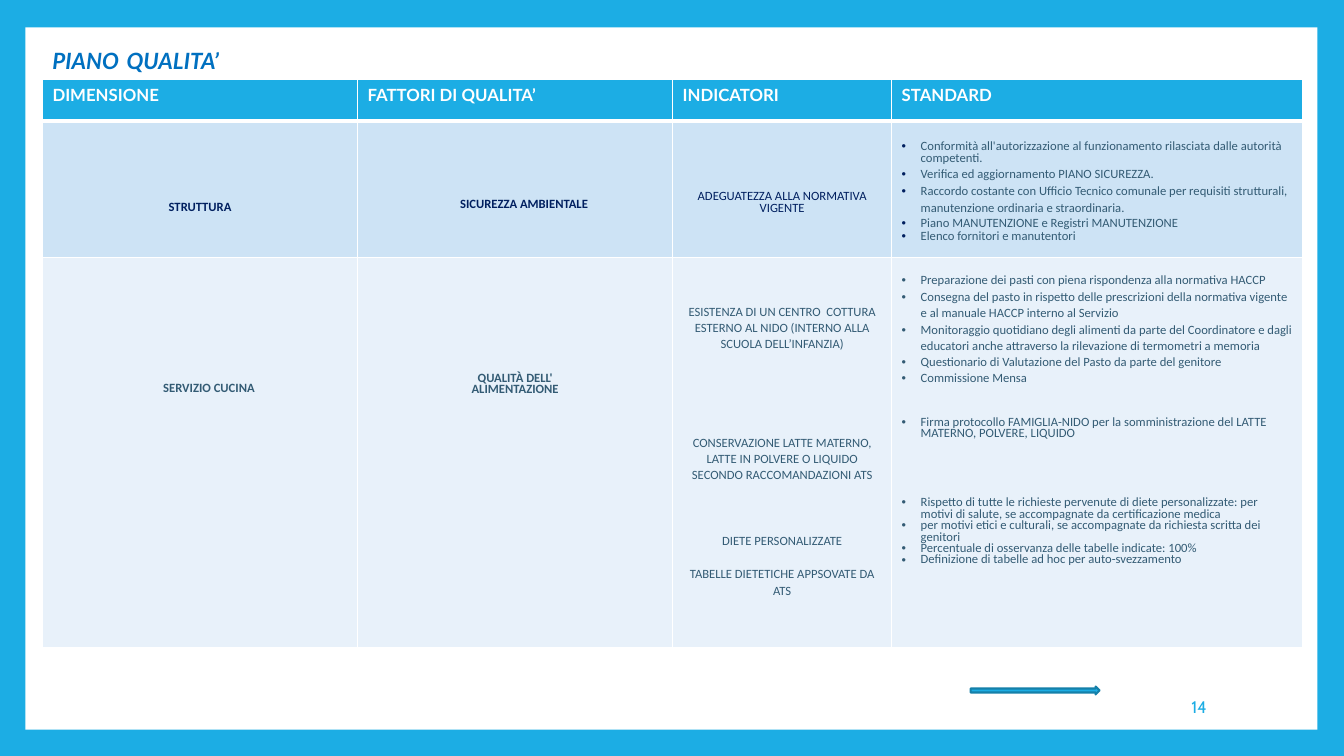
from lxml import etree
from pptx import Presentation
from pptx import util as u
from pptx.dml.color import RGBColor
from pptx.enum import shapes, text
from pptx.oxml.ns import qn

Cm, Pt = u.Cm, u.Pt
COLORS = {"sky": "1CADE4", "white": "FFFFFF", "blue": "0070C0", "navy": "001F5F",
          "slate": "335B74", "edge": "1580A9", "band1": "CDE3F5", "band2": "E8F1FA",
          "black": "000000"}
LEFT, CENTER, RIGHT = text.PP_ALIGN.LEFT, text.PP_ALIGN.CENTER, text.PP_ALIGN.RIGHT

HEADERS = ["DIMENSIONE", "FATTORI DI QUALITA’", "INDICATORI", "STANDARD"]
COLUMN_WIDTHS = [7.94, 7.94, 5.52, 10.36]
ROW_HEIGHTS = [1.04, 3.43, 9.85]
TIGHT = Pt(8.2)

# Each cell: top margin (cm), left indent (cm), paragraphs.
# Each paragraph: wording, line spacing, space before (pt).
STRUTTURA = [
    (1.98, 0, [("STRUTTURA", 1.0, 0)]),
    (1.87, 0.45, [("SICUREZZA AMBIENTALE", 1.07, 0)]),
    (1.81, 0, [("ADEGUATEZZA ALLA NORMATIVA VIGENTE", Pt(8.1), 0)]),
    (0.55, 0.48, [
        ("Conformità all'autorizzazione al funzionamento rilasciata dalle autorità "
         "competenti.", Pt(8.1), 0),
        ("Verifica ed aggiornamento PIANO SICUREZZA.", 1.0, 0.7),
        ("Raccordo costante con Ufficio Tecnico comunale per requisiti strutturali, "
         "manutenzione ordinaria e straordinaria.", 1.07, 0.7),
        ("Piano MANUTENZIONE e Registri MANUTENZIONE", 1.0, 0),
        ("Elenco fornitori e manutentori", TIGHT, 0.7),
    ]),
]
CUCINA = [
    (3.07, 0.45, [("SERVIZIO CUCINA", 1.07, 0)]),
    (2.82, 0, [("QUALITÀ DELL'", 1.07, 0), ("ALIMENTAZIONE", Pt(8.4), 0)]),
    (1.16, 0, [
        ("ESISTENZA DI UN CENTRO  COTTURA ESTERNO AL NIDO (INTERNO ALLA SCUOLA "
         "DELL’INFANZIA)", 1.07, 0),
        ("CONSERVAZIONE LATTE MATERNO, LATTE IN POLVERE O LIQUIDO SECONDO "
         "RACCOMANDAZIONI ATS", 1.07, 58.3),
        ("DIETE PERSONALIZZATE", 1.07, 35.4),
        ("TABELLE DIETETICHE APPSOVATE DA ATS", 1.07, 11.9),
    ]),
    (0.38, 0.48, [
        ("Preparazione dei pasti con piena rispondenza alla normativa HACCP", 1.0, 0),
        ("Consegna del pasto in rispetto delle prescrizioni della normativa vigente e "
         "al manuale HACCP interno al Servizio", 1.07, 0.7),
        ("Monitoraggio quotidiano degli alimenti da parte del Coordinatore e dagli "
         "educatori anche attraverso la rilevazione di termometri a memoria", 1.06, 0.1),
        ("Questionario di Valutazione del Pasto da parte del genitore", 1.0, 0.1),
        ("Commissione Mensa", 1.0, 0.7),
        ("Firma protocollo FAMIGLIA-NIDO per la somministrazione del LATTE MATERNO, "
         "POLVERE, LIQUIDO", TIGHT, 23.2),
        ("Rispetto di tutte le richieste pervenute di diete personalizzate: per motivi "
         "di salute, se accompagnate da certificazione medica", TIGHT, 41),
        ("per motivi etici e culturali, se accompagnate da richiesta scritta dei "
         "genitori", TIGHT, 0),
        ("Percentuale di osservanza delle tabelle indicate: 100%", TIGHT, 0),
        ("Definizione di tabelle ad hoc per auto-svezzamento", TIGHT, 0),
    ]),
]


def rgb(name):
    return RGBColor.from_string(COLORS[name])


def style(r, font, size, color, bold=False, italic=False):
    f = r.font
    f.name, f.size, f.bold, f.italic = font, Pt(size), bold, italic
    f.color.rgb = rgb(color)


def add_box(s, kind, box, fill, line=None):
    sp = s.shapes.add_shape(kind, *map(Cm, box))
    sp.shadow.inherit = False
    sp.fill.solid()
    sp.fill.fore_color.rgb = rgb(fill)
    if line:
        sp.line.color.rgb = rgb(line)
        sp.line.width = Pt(1.5)
    else:
        sp.line.fill.background()


def add_bullet(p, indent, color):
    pPr = p._p.get_or_add_pPr()
    pPr.set("marL", str(Cm(indent)))
    pPr.set("indent", str(-Cm(indent)))
    clr = etree.SubElement(pPr, qn("a:buClr"))
    etree.SubElement(clr, qn("a:srgbClr"), val=COLORS[color])
    etree.SubElement(pPr, qn("a:buFont"), typeface="Arial")
    etree.SubElement(pPr, qn("a:buChar"), char="•")


def paint_cell(cell, fill, bottom=1):
    cell.fill.solid()
    cell.fill.fore_color.rgb = rgb(fill)
    tcPr = cell._tc.get_or_add_tcPr()
    for i, (side, width) in enumerate([("L", 1), ("R", 1), ("T", 1), ("B", bottom)]):
        ln = etree.Element(qn("a:ln" + side), w=str(Pt(width)))
        solid = etree.SubElement(ln, qn("a:solidFill"))
        etree.SubElement(solid, qn("a:srgbClr"), val=COLORS["white"])
        tcPr.insert(i, ln)


def fill_cell(cell, content, column, color, bullet_color):
    top, indent, paragraphs = content
    bulleted = column == 3
    cell.margin_top = Cm(top)
    cell.text_frame.text = "\n".join(wording for wording, _, _ in paragraphs)
    for p, (_, spacing, before) in zip(cell.text_frame.paragraphs, paragraphs):
        p.alignment = LEFT if bulleted else CENTER
        p.line_spacing = spacing
        p.space_before = Pt(before)
        if bulleted:
            add_bullet(p, indent, bullet_color)
        elif indent:
            p._p.get_or_add_pPr().set("marL", str(Cm(indent)))
        style(p.runs[0], "Calibri", 9, color, bold=column < 2)


def quality_table(s, left, top):
    table = s.shapes.add_table(3, 4, Cm(left), Cm(top), Cm(sum(COLUMN_WIDTHS)),
                               Cm(sum(ROW_HEIGHTS))).table
    table.horz_banding = False
    for column, width in zip(table.columns, COLUMN_WIDTHS):
        column.width = Cm(width)
    for row, height in zip(table.rows, ROW_HEIGHTS):
        row.height = Cm(height)
    # Header row
    for c, header in enumerate(HEADERS):
        cell = table.cell(0, c)
        cell.text_frame.text = header
        style(cell.text_frame.paragraphs[0].runs[0], "Lato", 12, "white", bold=True)
        paint_cell(cell, "sky", bottom=3)
    # Dimension rows
    bands = [(STRUTTURA, "band1", "navy"), (CUCINA, "band2", "slate")]
    for r, (contents, band, color) in enumerate(bands, start=1):
        for c, content in enumerate(contents):
            cell = table.cell(r, c)
            fill_cell(cell, content, c, "slate" if c == 3 else color, color)
            paint_cell(cell, band)


def title(s, box):
    tf = s.shapes.add_textbox(*map(Cm, box)).text_frame
    tf.word_wrap = True
    p = tf.paragraphs[0]
    for wording, font, size, color in [("PIANO", "Lato", 16, "blue"),
                                       (" ", "Cabin", 24, "black"),
                                       ("QUALITA’", "Lato", 16, "blue")]:
        r = p.add_run()
        r.text = wording
        style(r, font, size, color, bold=True, italic=font == "Lato")


def page_number(s, box):
    tf = s.shapes.add_textbox(*map(Cm, box)).text_frame
    tf.word_wrap = True
    tf.vertical_anchor = text.MSO_ANCHOR.MIDDLE
    tf.text = "14"
    p = tf.paragraphs[0]
    p.alignment = RIGHT
    style(p.runs[0], "Cabin", 12, "sky")


def quality_slide(prs):
    s = prs.slides.add_slide(prs.slide_layouts[6])
    s.background.fill.solid()
    s.background.fill.fore_color.rgb = rgb("sky")
    add_box(s, shapes.MSO_SHAPE.RECTANGLE, (0.64, 0.69, 32.56, 17.7), "white")
    page_number(s, (25.91, 17.3, 4.75, 1.02))
    quality_table(s, 1.07, 2.01)
    add_box(s, shapes.MSO_SHAPE.RIGHT_ARROW, (24.46, 17.3, 3.25, 0.2), "sky", "edge")
    title(s, (1.07, 0.79, 12.7, 1.27))


def main():
    prs = Presentation()
    prs.slide_width, prs.slide_height = Cm(33.87), Cm(19.05)
    quality_slide(prs)
    prs.save("out.pptx")


if __name__ == "__main__":
    main()
